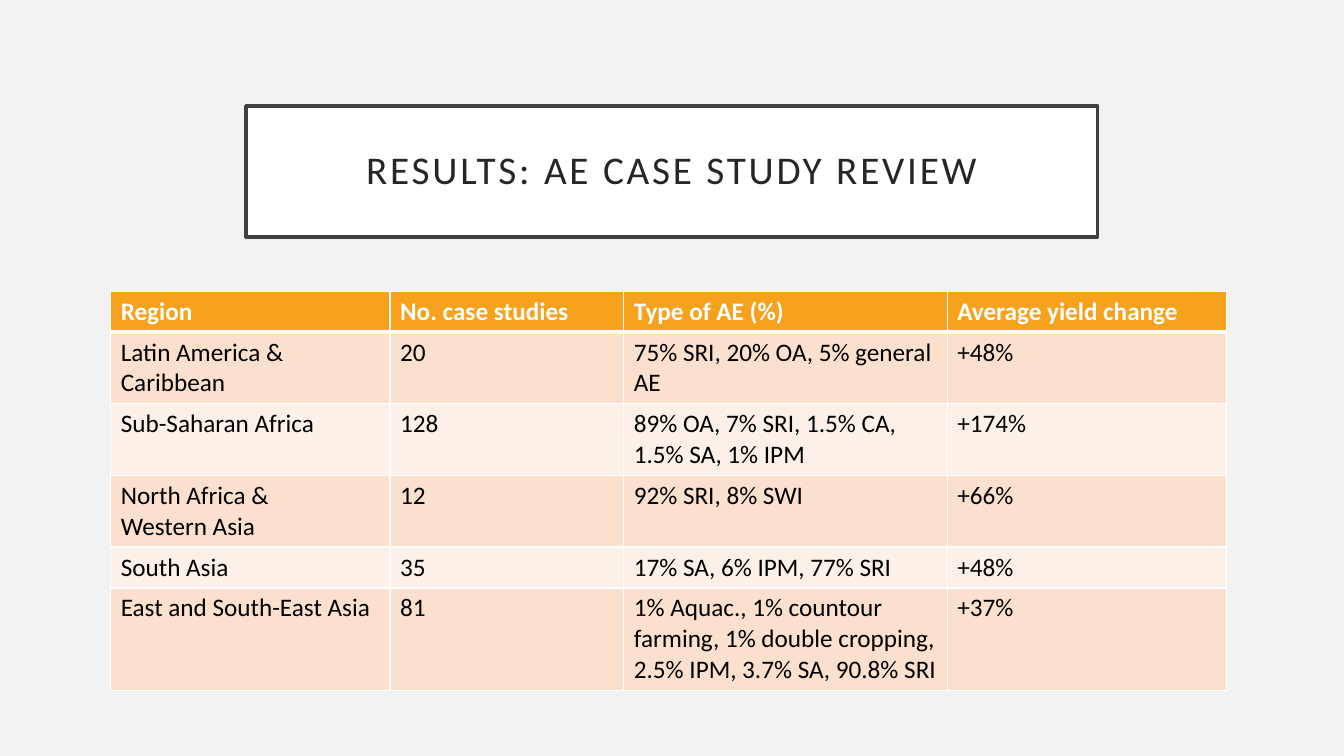
import pptx
import pptx.dml.color
import pptx.enum.text
import pptx.oxml
import pptx.oxml.ns
import pptx.util
from pptx.util import Cm

TITLE = "RESULTS: AE CASE STUDY REVIEW"
HEADER = ("Region", "No. case studies", "Type of AE (%)", "Average yield change")
REGIONS = [
    ("Latin America & Caribbean", "20", "75% SRI, 20% OA, 5% general AE", "+48%"),
    ("Sub-Saharan Africa", "128", "89% OA, 7% SRI, 1.5% CA, 1.5% SA, 1% IPM", "+174%"),
    ("North Africa &\nWestern Asia", "12", "92% SRI, 8% SWI", "+66%"),
    ("South Asia", "35", "17% SA, 6% IPM, 77% SRI", "+48%"),
    ("East and South-East Asia", "81",
     "1% Aquac., 1% countour farming, 1% double cropping, "
     "2.5% IPM, 3.7% SA, 90.8% SRI", "+37%"),
]
COLUMN_WIDTHS = (7.04, 5.89, 8.15, 7.04)
ROW_HEIGHT = 1.03
FONT = "Calibri"
COLORS = {
    "background": "F2F2F2",
    "white": "FFFFFF",
    "title": "262626",
    "frame": "404040",
    "header": "F6A21D",
    "odd": "FBE0CD",
    "even": "FDF0E8",
    "text": "000000",
}


def rgb(name):
    return pptx.dml.color.RGBColor.from_string(COLORS[name])


def paint(fill, name):
    fill.solid()
    fill.fore_color.rgb = rgb(name)


def write(frame, text, size=18, color="text", bold=False, align=None,
          line_spacing=None, tracking=None):
    """Fill a text frame, one paragraph per line; tracking is in points."""
    frame.text = text
    for paragraph in frame.paragraphs:
        paragraph.alignment = align
        paragraph.line_spacing = line_spacing
        for run in paragraph.runs:
            run.font.name = FONT
            run.font.size = pptx.util.Pt(size)
            run.font.bold = bold
            run.font.color.rgb = rgb(color)
            if tracking:
                run.font._element.set("spc", str(tracking * 100))


def add_borders(cell, bottom=1, top=1):
    properties = cell._tc.get_or_add_tcPr()
    for side, points in (("L", 1), ("R", 1), ("T", top), ("B", bottom)):
        properties.append(pptx.oxml.parse_xml(
            f'<a:ln{side} {pptx.oxml.ns.nsdecls("a")} w="{pptx.util.Pt(points)}">'
            f'<a:solidFill><a:srgbClr val="{COLORS["white"]}"/></a:solidFill>'
            f'</a:ln{side}>'))


def add_title(slide):
    title = slide.shapes.title
    title.left, title.top = Cm(6.2), Cm(2.67)
    title.width, title.height = Cm(21.46), Cm(3.3)
    paint(title.fill, "white")
    title.line.color.rgb = rgb("frame")
    title.line.width = pptx.util.Pt(2.5)
    frame = title.text_frame
    frame.word_wrap = True
    frame.auto_size = pptx.enum.text.MSO_AUTO_SIZE.NONE
    frame.vertical_anchor = pptx.enum.text.MSO_ANCHOR.MIDDLE
    frame.margin_left = frame.margin_right = Cm(0.51)
    frame.margin_top = frame.margin_bottom = Cm(0.51)
    write(frame, TITLE, size=28, color="title", line_spacing=0.9, tracking=2,
          align=pptx.enum.text.PP_ALIGN.CENTER)


def add_region_table(slide):
    rows = [HEADER, *REGIONS]
    table = slide.shapes.add_table(
        len(rows), len(HEADER), Cm(2.79), Cm(7.34),
        Cm(sum(COLUMN_WIDTHS)), Cm(ROW_HEIGHT * len(rows))).table
    for column, width in zip(table.columns, COLUMN_WIDTHS):
        column.width = Cm(width)
    for row_index, values in enumerate(rows):
        table.rows[row_index].height = Cm(ROW_HEIGHT)
        is_header = row_index == 0
        band = "header" if is_header else ("even", "odd")[row_index % 2]
        for column_index, value in enumerate(values):
            cell = table.cell(row_index, column_index)
            add_borders(cell, bottom=3 if is_header else 1,
                        top=3 if row_index == 1 else 1)
            paint(cell.fill, band)
            write(cell.text_frame, value, bold=is_header,
                  color="white" if is_header else "text")


def main():
    presentation = pptx.Presentation()
    presentation.slide_width, presentation.slide_height = Cm(33.87), Cm(19.05)
    title_only = presentation.slide_layouts[5]
    slide = presentation.slides.add_slide(title_only)
    paint(slide.background.fill, "background")
    add_title(slide)
    add_region_table(slide)
    presentation.save("out.pptx")


if __name__ == "__main__":
    main()
